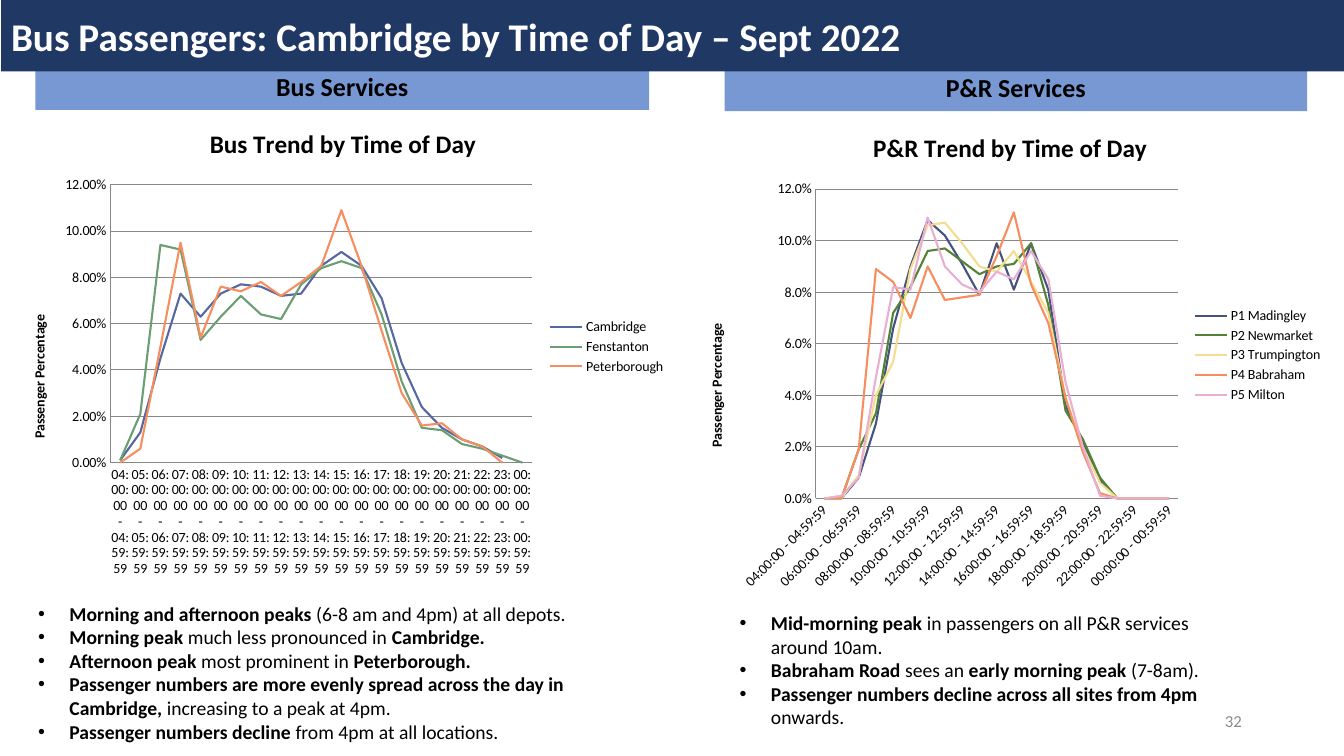
from dataclasses import dataclass

from lxml import etree
from pptx import Presentation
from pptx.chart.data import CategoryChartData
from pptx.dml.color import RGBColor
from pptx.enum.chart import XL_CHART_TYPE, XL_LEGEND_POSITION, XL_TICK_MARK
from pptx.enum.shapes import MSO_SHAPE
from pptx.enum.text import MSO_ANCHOR, PP_ALIGN
from pptx.oxml.ns import qn
from pptx.util import Cm, Pt

LINE_CHART = XL_CHART_TYPE.LINE
LEGEND_RIGHT = XL_LEGEND_POSITION.RIGHT
NO_TICKS = XL_TICK_MARK.NONE
RECTANGLE = MSO_SHAPE.RECTANGLE
TOP, MIDDLE = MSO_ANCHOR.TOP, MSO_ANCHOR.MIDDLE
LEFT, CENTER, RIGHT = PP_ALIGN.LEFT, PP_ALIGN.CENTER, PP_ALIGN.RIGHT


@dataclass(frozen=True)
class Theme:
    font: str = "Calibri"
    title_size: float = 28
    heading_size: float = 18.5
    chart_title_size: float = 18
    body_size: float = 14
    number_size: float = 12
    chart_size: float = 10
    series_width: float = 1.5
    navy: str = "203864"
    blue: str = "7798D3"
    black: str = "000000"
    white: str = "FFFFFF"
    gray: str = "8C8C8C"
    grid: str = "878787"


THEME = Theme()

HOURS = [f"{hour:02}:00:00 - {hour:02}:59:59" for hour in [*range(4, 24), 0]]

BUS_SERIES = [
    ("Cambridge", "56689F",
     [0.001, 0.013, 0.045, 0.073, 0.063, 0.073, 0.077, 0.076, 0.072, 0.073, 0.085,
      0.091, 0.085, 0.071, 0.043, 0.024, 0.015, 0.01, 0.007, 0.002]),
    ("Fenstanton", "6B9E73",
     [0.001, 0.021, 0.094, 0.092, 0.053, 0.063, 0.072, 0.064, 0.062, 0.077, 0.084,
      0.087, 0.084, 0.064, 0.035, 0.015, 0.014, 0.008, 0.006, 0.003, 0]),
    ("Peterborough", "F68E5F",
     [0, 0.006, 0.05, 0.095, 0.054, 0.076, 0.074, 0.078, 0.072, 0.078, 0.085,
      0.109, 0.085, 0.057, 0.03, 0.016, 0.017, 0.01, 0.007, 0]),
]
PARK_RIDE_SERIES = [
    ("P1 Madingley", "45537F",
     [0, 0, 0.008, 0.029, 0.066, 0.09, 0.108, 0.102, 0.091, 0.079, 0.099,
      0.081, 0.099, 0.081, 0.036, 0.022, 0.007, 0, 0, 0, 0]),
    ("P2 Newmarket", "548235",
     [0, 0, 0.019, 0.033, 0.072, 0.082, 0.096, 0.097, 0.092, 0.087, 0.09,
      0.091, 0.099, 0.075, 0.034, 0.023, 0.008, 0, 0, 0, 0]),
    ("P3 Trumpington", "F5DD90",
     [0, 0, 0.009, 0.04, 0.053, 0.089, 0.106, 0.107, 0.099, 0.09, 0.088,
      0.096, 0.084, 0.072, 0.039, 0.02, 0.006, 0, 0, 0, 0]),
    ("P4 Babraham", "F68E5F",
     [0, 0, 0.019, 0.089, 0.084, 0.07, 0.09, 0.077, 0.078, 0.079, 0.094,
      0.111, 0.083, 0.068, 0.039, 0.018, 0.002, 0, 0, 0, 0]),
    ("P5 Milton", "E9AFD2",
     [0, 0.001, 0.008, 0.047, 0.082, 0.081, 0.109, 0.09, 0.083, 0.08, 0.088,
      0.085, 0.096, 0.085, 0.045, 0.02, 0.001, 0, 0, 0, 0]),
]

# Runs of each bullet alternate between bold and regular, starting with bold.
BUS_NOTES = [
    ("Morning and afternoon peaks", " (6-8 am and 4pm) at all depots."),
    ("Morning peak", " much less pronounced in\u00a0", "Cambridge."),
    ("Afternoon peak ", "most prominent in ", "Peterborough."),
    ("Passenger numbers are more evenly spread across the day in Cambridge, ",
     "increasing to a peak at 4pm."),
    ("Passenger numbers decline ", "from 4pm at all locations."),
]
PARK_RIDE_NOTES = [
    ("Mid-morning peak ", "in passengers on all P&R services around 10am."),
    ("Babraham Road ", "sees an ", "early morning peak ", "(7-8am)."),
    ("Passenger numbers decline across all sites from 4pm ", "onwards."),
]


def style_font(font, size, color=THEME.black, bold=False):
    font.name = THEME.font
    font.size = Pt(size)
    font.bold = bold
    font.color.rgb = RGBColor.from_string(color)


def write_line(shape, text, size, color, bold, alignment, anchor):
    frame = shape.text_frame
    frame.word_wrap = True
    frame.vertical_anchor = anchor
    frame.text = text
    paragraph = frame.paragraphs[0]
    paragraph.alignment = alignment
    style_font(paragraph.runs[0].font, size, color, bold)
    return paragraph


def add_band(slide, box, fill, text, size, color, alignment, anchor):
    shape = slide.shapes.add_shape(RECTANGLE, *map(Cm, box))
    shape.shadow.inherit = False
    shape.fill.solid()
    shape.fill.fore_color.rgb = RGBColor.from_string(fill)
    shape.line.fill.background()
    return write_line(shape, text, size, color, True, alignment, anchor)


def add_heading(slide, box, text):
    paragraph = add_band(slide, box, THEME.blue, text, THEME.heading_size,
                         THEME.black, CENTER, TOP)
    paragraph.line_spacing = 0.9


def add_notes(slide, box, notes):
    frame = slide.shapes.add_textbox(*map(Cm, box)).text_frame
    frame.word_wrap = True
    for index, parts in enumerate(notes):
        paragraph = frame.add_paragraph() if index else frame.paragraphs[0]
        properties = paragraph._p.get_or_add_pPr()
        properties.set("marL", str(Cm(0.79)))
        properties.set("indent", str(-Cm(0.79)))
        etree.SubElement(properties, qn("a:buFont")).set("typeface", "Arial")
        etree.SubElement(properties, qn("a:buChar")).set("char", "•")
        for position, part in enumerate(parts):
            run = paragraph.add_run()
            run.text = part
            style_font(run.font, THEME.body_size, bold=position % 2 == 0)


def write_chart_title(owner, title, size):
    """Title a chart or an axis."""
    owner.has_title = True
    frame = (owner.chart_title if hasattr(owner, "chart_title") else owner.axis_title).text_frame
    frame.text = title
    style_font(frame.paragraphs[0].runs[0].font, size, bold=True)


def add_trend_chart(slide, box, title, series_list, number_format, label_angle):
    data = CategoryChartData(number_format=number_format)
    data.categories = HOURS
    for name, _, values in series_list:
        data.add_series(name, values)
    chart = slide.shapes.add_chart(LINE_CHART, *map(Cm, box), data).chart
    style_font(chart.font, THEME.chart_size)
    write_chart_title(chart, title, THEME.chart_title_size)
    chart.has_legend = True
    chart.legend.position = LEGEND_RIGHT
    chart.legend.include_in_layout = False

    for series, (_, color, _) in zip(chart.plots[0].series, series_list):
        series.smooth = False
        series.format.line.width = Pt(THEME.series_width)
        series.format.line.color.rgb = RGBColor.from_string(color)

    hours, share = chart.category_axis, chart.value_axis
    for axis in (hours, share):
        axis.major_tick_mark = axis.minor_tick_mark = NO_TICKS
        style_font(axis.tick_labels.font, THEME.chart_size)
        axis.format.line.color.rgb = RGBColor.from_string(THEME.grid)
    label_body = hours._element.find(qn("c:txPr")).find(qn("a:bodyPr"))
    label_body.set("rot", str(label_angle * 60000))
    label_body.set("vert", "horz")

    write_chart_title(share, "Passenger Percentage", THEME.chart_size)
    share.minimum_scale, share.maximum_scale, share.major_unit = 0, 0.12, 0.02
    share.tick_labels.number_format = number_format
    share.tick_labels.number_format_is_linked = False
    share.major_gridlines.format.line.color.rgb = RGBColor.from_string(THEME.grid)


def main():
    presentation = Presentation()
    presentation.slide_width, presentation.slide_height = Cm(33.87), Cm(19.05)
    slide = presentation.slides.add_slide(presentation.slide_layouts[6])

    add_heading(slide, (0.89, 1.75, 15.47, 1.02), "Bus Services")
    add_heading(slide, (18.26, 1.78, 14.68, 1.02), "P&R Services")
    add_band(slide, (0.03, 0, 33.84, 1.8), THEME.navy,
             "Bus Passengers: Cambridge by Time of Day – Sept 2022",
             THEME.title_size, THEME.white, LEFT, MIDDLE)
    page_number = slide.shapes.add_textbox(Cm(23.93), Cm(17.65), Cm(7.62), Cm(1.02))
    write_line(page_number, "32", THEME.number_size, THEME.gray, False, RIGHT, MIDDLE)
    add_notes(slide, (0.71, 15.04, 15.37, 3.84), BUS_NOTES)
    add_notes(slide, (18.39, 15.27, 13.16, 3.25), PARK_RIDE_NOTES)
    add_trend_chart(slide, (17.32, 2.79, 16.28, 12.32), "P&R Trend by Time of Day",
                    PARK_RIDE_SERIES, "0.0%", -45)
    add_trend_chart(slide, (0.25, 2.69, 16.79, 12.09), "Bus Trend by Time of Day",
                    BUS_SERIES, "0.00%", 0)
    presentation.save("out.pptx")


if __name__ == "__main__":
    main()
